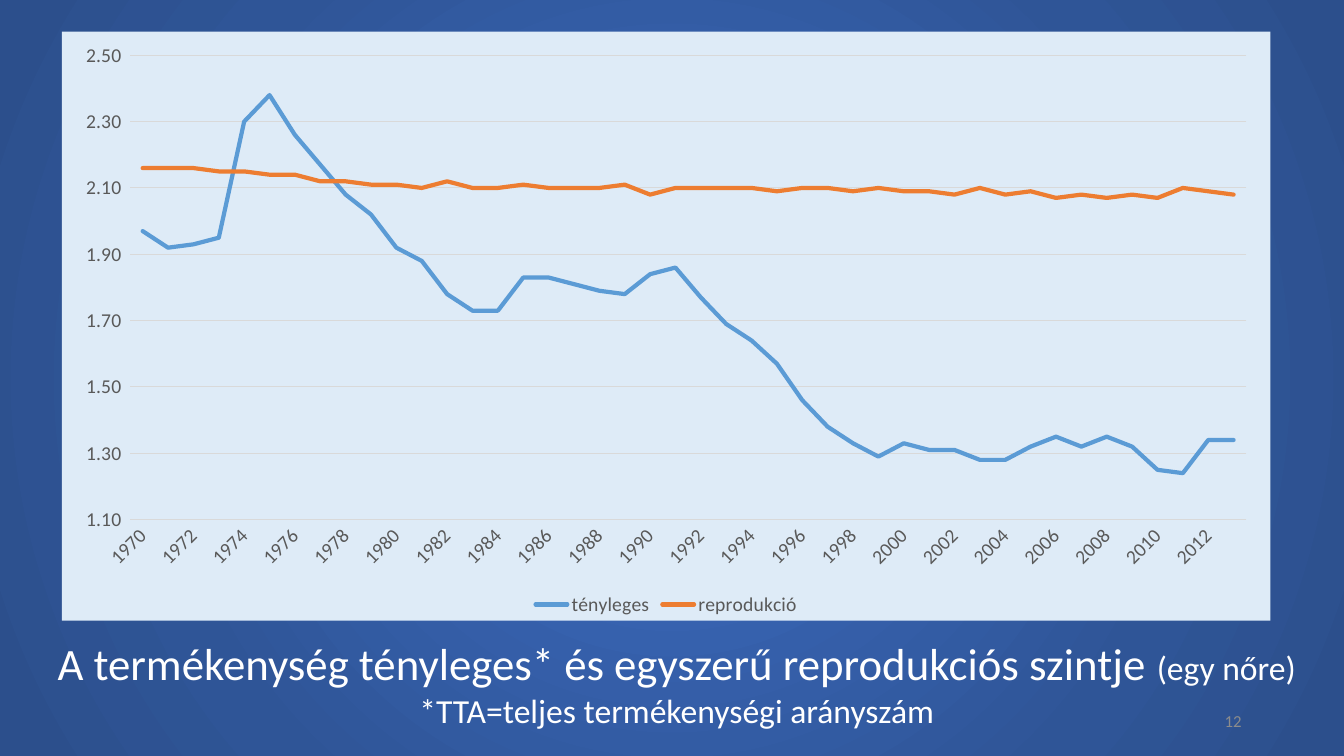
from lxml import etree
from pptx import Presentation
from pptx.chart.data import CategoryChartData
from pptx.dml.color import RGBColor
from pptx.enum.chart import XL_CHART_TYPE, XL_LEGEND_POSITION, XL_TICK_MARK
from pptx.enum.text import MSO_ANCHOR, PP_ALIGN
from pptx.oxml.ns import qn
from pptx.util import Pt

PX = 9525
FONT = "Calibri"
WHITE = RGBColor(0xFF, 0xFF, 0xFF)
NUMBER_GREY = RGBColor(0x8C, 0x8C, 0x8C)
LABEL_GREY = RGBColor(0x59, 0x59, 0x59)
GRID_GREY = RGBColor(0xD9, 0xD9, 0xD9)
PALE_BLUE = RGBColor(0xDE, 0xEB, 0xF7)
BLUE = RGBColor(0x5B, 0x9B, 0xD5)
ORANGE = RGBColor(0xED, 0x7D, 0x31)
CENTRE_BLUE = RGBColor(0x38, 0x64, 0xB3)
MIDDLE_BLUE = RGBColor(0x2F, 0x55, 0x97)
EDGE_BLUE = RGBColor(0x2C, 0x4F, 0x8C)
GRADIENT = [(0, CENTRE_BLUE), (23, CENTRE_BLUE), (69, MIDDLE_BLUE), (97, EDGE_BLUE)]

LINE = XL_CHART_TYPE.LINE
BOTTOM = XL_LEGEND_POSITION.BOTTOM
NO_TICK = XL_TICK_MARK.NONE
CENTER, RIGHT = PP_ALIGN.CENTER, PP_ALIGN.RIGHT
TOP, MIDDLE = MSO_ANCHOR.TOP, MSO_ANCHOR.MIDDLE

YEARS = [str(year) for year in range(1970, 2014)]
FERTILITY = {
    "tényleges": (BLUE, [
        1.97, 1.92, 1.93, 1.95, 2.3, 2.38, 2.26, 2.17, 2.08, 2.02, 1.92,
        1.88, 1.78, 1.73, 1.73, 1.83, 1.83, 1.81, 1.79, 1.78, 1.84, 1.86,
        1.77, 1.69, 1.64, 1.57, 1.46, 1.38, 1.33, 1.29, 1.33, 1.31, 1.31,
        1.28, 1.28, 1.32, 1.35, 1.32, 1.35, 1.32, 1.25, 1.24, 1.34, 1.34]),
    "reprodukció": (ORANGE, [
        2.16, 2.16, 2.16, 2.15, 2.15, 2.14, 2.14, 2.12, 2.12, 2.11, 2.11,
        2.1, 2.12, 2.1, 2.1, 2.11, 2.1, 2.1, 2.1, 2.11, 2.08, 2.1,
        2.1, 2.1, 2.1, 2.09, 2.1, 2.1, 2.09, 2.1, 2.09, 2.09, 2.08,
        2.1, 2.08, 2.09, 2.07, 2.08, 2.07, 2.08, 2.07, 2.1, 2.09, 2.08]),
}


def apply(target, formats):
    for name, value in formats.items():
        setattr(target, name, value)


def style_font(font, size, color):
    apply(font, {"name": FONT, "size": Pt(size)})
    font.color.rgb = color


def style_line(line, color, width):
    line.color.rgb = color
    line.width = Pt(width)


def paint_background(page):
    page.background.fill.gradient()
    gradient = next(page._element.iter(qn("a:gradFill")))
    for child in list(gradient):
        gradient.remove(child)
    stops = etree.SubElement(gradient, qn("a:gsLst"))
    for percent, color in GRADIENT:
        stop = etree.SubElement(stops, qn("a:gs"), pos=str(percent * 1000))
        etree.SubElement(stop, qn("a:srgbClr"), val=str(color))
    circle = etree.SubElement(gradient, qn("a:path"))
    circle.set("path", "circle")
    middle = dict.fromkeys("ltrb", "50000")
    etree.SubElement(circle, qn("a:fillToRect"), middle)


def add_text(page, bounds, lines, color, align, anchor):
    box = page.shapes.add_textbox(*(n * PX for n in bounds))
    frame = box.text_frame
    apply(frame, {"word_wrap": True, "vertical_anchor": anchor})
    for index, spans in enumerate(lines):
        para = frame.add_paragraph() if index else frame.paragraphs[0]
        para.alignment = align
        for text, size in spans:
            span = para.add_run()
            span.text = text
            style_font(span.font, size, color)


def style_axes(chart):
    years, rates = chart.category_axis, chart.value_axis
    for axis in (years, rates):
        apply(axis, {"major_tick_mark": NO_TICK, "minor_tick_mark": NO_TICK})
        style_font(axis.tick_labels.font, 14, LABEL_GREY)
        turn = next(axis._element.iter(qn("a:bodyPr")))
        turn.set("rot", "-60000000")
        turn.set("vert", "horz")
    style_line(years.format.line, GRID_GREY, 0.75)
    apply(rates, {"minimum_scale": 1.1, "has_major_gridlines": True})
    apply(rates.tick_labels, {"number_format": "0.00_)",
                              "number_format_is_linked": False})
    rates.format.line.fill.background()
    style_line(rates.major_gridlines.format.line, GRID_GREY, 0.75)


def fill_chart_area(chart):
    area = etree.Element(qn("c:spPr"))
    fill = etree.SubElement(area, qn("a:solidFill"))
    etree.SubElement(fill, qn("a:srgbClr"), val=str(PALE_BLUE))
    border = etree.SubElement(area, qn("a:ln"))
    etree.SubElement(border, qn("a:noFill"))
    chart._chartSpace.find(qn("c:chart")).addnext(area)


def add_fertility_chart(page, bounds):
    data = CategoryChartData(number_format="0.00")
    data.categories = YEARS
    for name, (color, values) in FERTILITY.items():
        data.add_series(name, values)
    box = (n * PX for n in bounds)
    chart = page.shapes.add_chart(LINE, *box, data).chart
    apply(chart, {"has_title": False, "has_legend": True})
    style_font(chart.font, 10, LABEL_GREY)
    apply(chart.legend, {"position": BOTTOM, "include_in_layout": False})
    style_font(chart.legend.font, 14, LABEL_GREY)
    chart.plots[0].vary_by_categories = False
    for series in chart.plots[0].series:
        series.smooth = False
        style_line(series.format.line, FERTILITY[series.name][0], 3)
        next(series._element.iter(qn("a:ln"))).set("cap", "rnd")
    style_axes(chart)
    fill_chart_area(chart)


def main():
    deck = Presentation()
    apply(deck, {"slide_width": 1280 * PX, "slide_height": 720 * PX})
    page = deck.slides.add_slide(deck.slide_layouts[6])
    paint_background(page)
    caption = [
        [("A termékenység tényleges* és egyszerű reprodukciós szintje ", 32),
         ("(egy nőre)", 24)],
        [("*TTA=teljes termékenységi arányszám", 24)],
    ]
    add_text(page, (33, 601, 1223, 100), caption, WHITE, CENTER, TOP)
    add_fertility_chart(page, (59, 30, 1151, 561))
    add_text(page, (904, 667, 288, 38), [[("12", 12)]], NUMBER_GREY, RIGHT, MIDDLE)
    deck.save("out.pptx")


if __name__ == "__main__":
    main()
